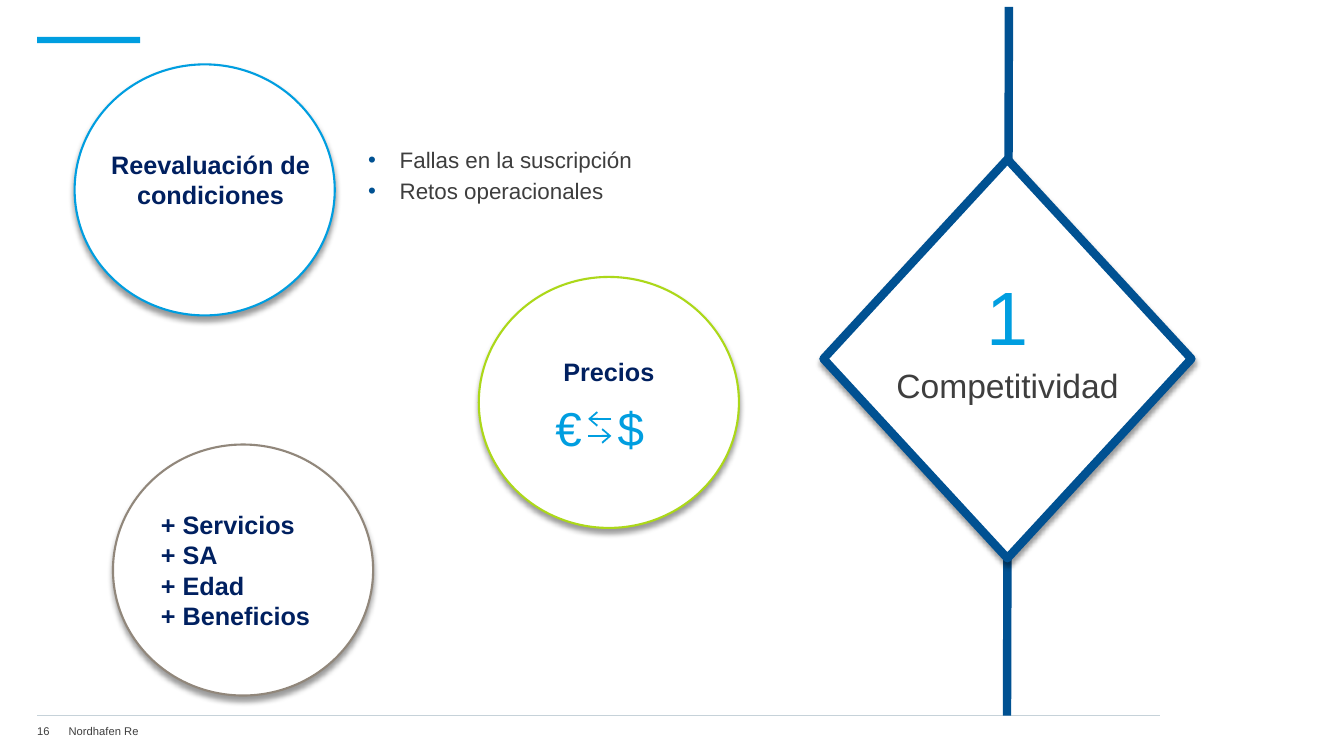
"""Build the slide on competitiveness with three circles and a diamond."""
import pptx
import pptx.util
import pptx.dml.color
import pptx.enum.shapes
import pptx.enum.text
import pptx.oxml

Pt = pptx.util.Pt
rgb = pptx.dml.color.RGBColor.from_string
parse_xml = pptx.oxml.parse_xml
Kind = pptx.enum.shapes.MSO_SHAPE
Align = pptx.enum.text.PP_ALIGN
Anchor = pptx.enum.text.MSO_ANCHOR

HEX = {"sky": "009EE0", "blue": "005192", "navy": "002060", "gray": "3E3E3E",
       "rule": "C6D2D9", "lime": "ACD819", "taupe": "91877B", "white": "FFFFFF",
       "black": "000000"}
FONT = {
    "foot": {"size": Pt(8), "bold": False, "tint": "gray"},
    "list": {"size": Pt(16), "bold": False, "tint": "gray"},
    "head": {"size": Pt(18), "bold": True, "tint": "navy"},
    "topic": {"size": Pt(24), "bold": False, "tint": "gray"},
    "money": {"size": Pt(34), "bold": False, "tint": "sky"},
    "number": {"size": Pt(54), "bold": False, "tint": "sky"},
}
NS = 'xmlns:a="http://schemas.openxmlformats.org/drawingml/2006/main"'
SHADOW = (f'<a:effectLst {NS}><a:outerShdw blurRad="{Pt(4)}" dist="{Pt(3)}" dir="5400000" '
          f'algn="ctr" rotWithShape="0"><a:srgbClr val="{HEX["black"]}">'
          '<a:alpha val="40000"/></a:srgbClr></a:outerShdw></a:effectLst>')
BULLET = (f'<a:buClr {NS}><a:srgbClr val="{HEX["blue"]}"/></a:buClr>',
          f'<a:buFont {NS} typeface="Arial"/>',
          f'<a:buChar {NS} char="•"/>')
INDENT = Pt(22.5)


def draw(kind, place, fill, edge=None, width=0):
    """Add a filled shape; an outlined one also casts a shadow."""
    shape = shapes.add_shape(kind, *map(Pt, place))
    shape.shadow.inherit = False
    shape.fill.solid()
    shape.fill.fore_color.rgb = rgb(HEX[fill])
    if edge:
        shape.line.color.rgb = rgb(HEX[edge])
        shape.line.width = Pt(width)
        props = shape._element.spPr
        props.remove(props.find(pptx.oxml.ns.qn("a:effectLst")))
        props.append(parse_xml(SHADOW))
    else:
        shape.line.fill.background()
    return shape


def write(frame, rows, align, anchor, gap=0, pad=(0, 0, 0, 0), bullet=False):
    """Write rows of (text, font style) into a text frame."""
    frame.word_wrap = True
    frame.vertical_anchor = anchor
    for side, room in zip(("left", "top", "right", "bottom"), pad):
        setattr(frame, f"margin_{side}", Pt(room))
    for num, (text, style) in enumerate(rows):
        para = frame.add_paragraph() if num else frame.paragraphs[0]
        para.alignment = align
        para.space_before = Pt(gap if num else 0)
        if bullet:
            props = para._p.get_or_add_pPr()
            props.set("marL", str(INDENT))
            props.set("indent", str(-INDENT))
            for part in BULLET:
                props.append(parse_xml(part))
        run = para.add_run()
        run.text = text
        run.font.name = "Arial"
        for name, value in FONT[style].items():
            if name == "tint":
                run.font.color.rgb = rgb(HEX[value])
            else:
                setattr(run.font, name, value)


deck = pptx.Presentation()
deck.slide_width, deck.slide_height = Pt(960), Pt(540)
slide = deck.slides.add_slide(deck.slide_layouts[6])
shapes = slide.shapes

draw(Kind.RECTANGLE, (26.6, 26.4, 73.5, 4.5), "sky")

ring_size = (185.8, 179.3)
inset = (7.2, 3.6, 7.2, 3.6)
lifted = (7.2, 3.6, 7.2, 48)
rings = [
    ((53.3, 46), "sky", [], Align.CENTER, inset),
    ((342, 197.8), "lime", ["Precios"], Align.CENTER, lifted),
    ((80.7, 317.5), "taupe", ["+ Servicios", "+ SA", "+ Edad", "+ Beneficios"],
     Align.LEFT, inset),
]
for corner, edge, words, align, pad in rings:
    ring = draw(Kind.OVAL, corner + ring_size, "white", edge, 1.5)
    write(ring.text_frame, [(word, "head") for word in words], align, Anchor.MIDDLE, pad=pad)

mid_x, mid_y = 428.4, 305.3
reach, rise = 8.3, 6.1
left, right = mid_x - reach, mid_x + reach
upper, lower = mid_y - rise, mid_y + rise
lines = [
    ((26.6, 510.8, 828.7, 510.8), "rule", 0.75, False),
    ((720.7, 5, 719.3, 511.2), "blue", 6, False),
    ((right, upper, left, upper), "sky", 1.5, True),
    ((left, lower, right, lower), "sky", 1.5, True),
]
for ends, tint, width, arrow in lines:
    line = shapes.add_connector(pptx.enum.shapes.MSO_CONNECTOR.STRAIGHT, *map(Pt, ends))
    line.line.color.rgb = rgb(HEX[tint])
    line.line.width = Pt(width)
    if arrow:
        line.line._get_or_add_ln().append(
            parse_xml(f'<a:tailEnd {NS} type="arrow" w="lg" len="med"/>'))
    line._element.spPr.append(parse_xml(f"<a:effectLst {NS}/>"))

draw(Kind.FLOWCHART_DECISION, (588.2, 113.8, 262.8, 285), "white", "blue", 6)

sign_wide, sign_high, sign_step = 30, 40, 22.2
for sign, side in [("€", -1), ("$", 1)]:
    place = (mid_x + side * sign_step - sign_wide / 2, mid_y - sign_high / 2,
             sign_wide, sign_high)
    write(shapes.add_textbox(*map(Pt, place)).text_frame, [(sign, "money")],
          Align.CENTER, Anchor.MIDDLE)

notes = [
    ((26.6, 513.8, 22.3, 17.3), [("16", "foot")], Align.LEFT, Anchor.MIDDLE, False),
    ((49, 513.8, 776.2, 17.3), [("Nordhafen Re", "foot")], Align.LEFT, Anchor.MIDDLE, False),
    ((635, 192.6, 169.2, 87.8), [("1", "number"), ("Competitividad", "topic")],
     Align.CENTER, Anchor.TOP, False),
    ((77, 106.6, 146.9, 48.2), [("Reevaluación de condiciones", "head")],
     Align.CENTER, Anchor.TOP, False),
    ((263, 104.4, 205.2, 152.6),
     [("Fallas en la suscripción", "list"), ("Retos operacionales", "list")],
     Align.LEFT, Anchor.TOP, True),
]
for place, rows, align, anchor, bullet in notes:
    write(shapes.add_textbox(*map(Pt, place)).text_frame, rows, align, anchor,
          gap=3, bullet=bullet)

deck.save("out.pptx")
